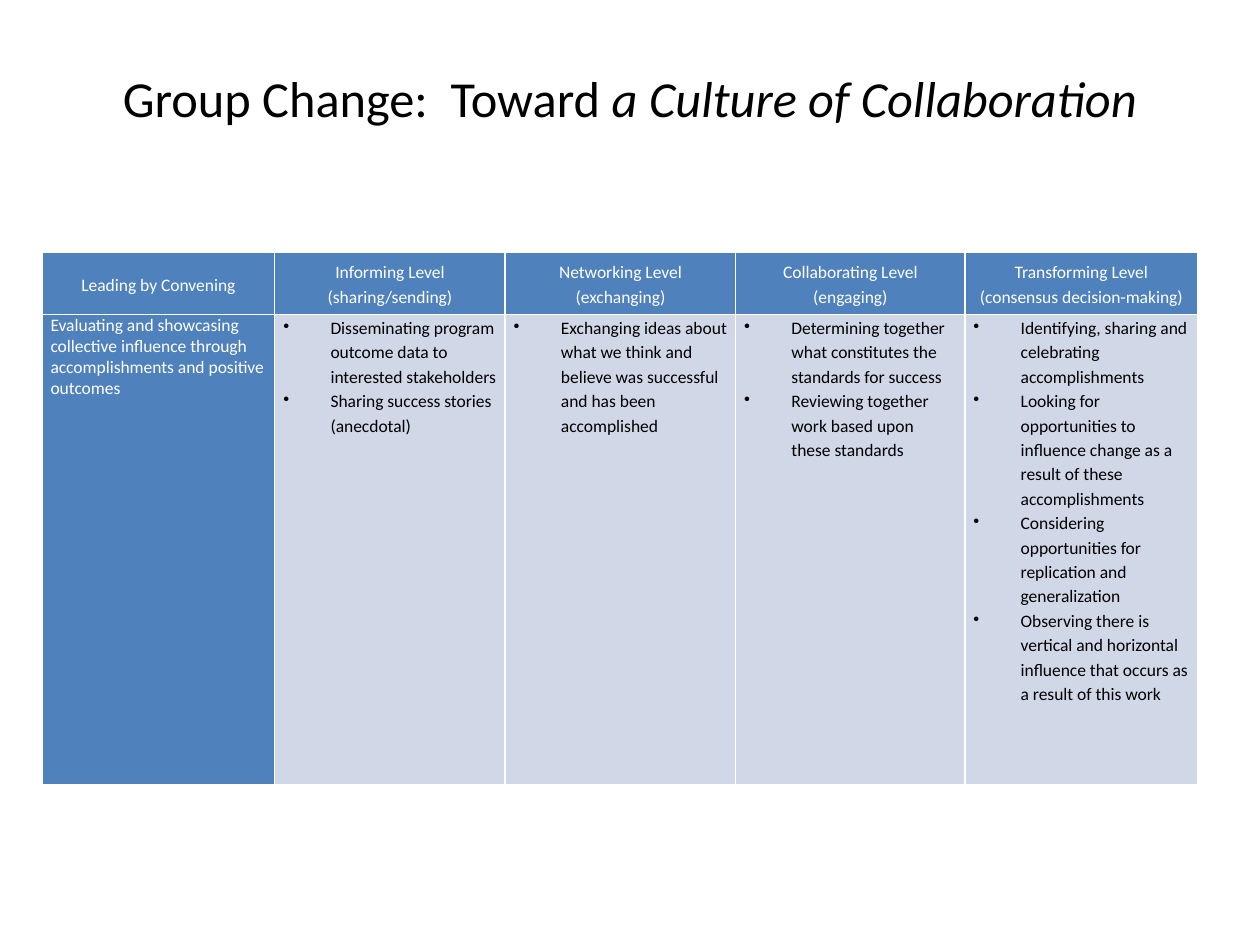
import pptx
import pptx.util
import pptx.dml.color
import pptx.enum.text
import pptx.oxml
import pptx.oxml.ns

Pt = pptx.util.Pt
ALIGN = pptx.enum.text.PP_ALIGN
ANCHOR = pptx.enum.text.MSO_ANCHOR

COLORS = {"heading": "4F81BD", "body": "D0D8E8", "light": "FFFFFF", "dark": "000000"}
FONT = "Calibri"
TITLE = [("Group Change:  Toward ", False), ("a Culture of Collaboration", True)]
LEVELS = [
    ["Leading by Convening"],
    ["Informing Level", "(sharing/sending)"],
    ["Networking Level", "(exchanging)"],
    ["Collaborating Level", "(engaging)"],
    ["Transforming Level", "(consensus decision-making)"],
]
PRACTICES = [
    ["Evaluating and showcasing collective influence through accomplishments and positive outcomes"],
    ["Disseminating program outcome data to interested stakeholders",
     "Sharing success stories (anecdotal)"],
    ["Exchanging ideas about what we think and believe was successful and has been accomplished"],
    ["Determining together what constitutes the standards for success",
     "Reviewing together work based upon these standards"],
    ["Identifying, sharing and celebrating accomplishments",
     "Looking for opportunities to influence change as a result of these accomplishments",
     "Considering opportunities for replication and generalization",
     "Observing there is vertical and horizontal influence that occurs as a result of this work"],
]
COLUMN_WIDTHS = [133, 131.7, 131.7, 131, 133]
ROW_HEIGHTS = [35.5, 268.5]
TABLE_LEFT, TABLE_TOP = 24, 144.3
BULLET_INDENT = 27
CELL_FORMAT = {"margin_left": Pt(4.9), "margin_right": Pt(4.9), "margin_top": 0, "margin_bottom": 0}
TABLE_FORMAT = {"first_row": False, "horz_banding": False}
TITLE_BOX = {"left": Pt(36), "top": Pt(21.6), "width": Pt(648), "height": Pt(68.4)}


def apply(target, formats):
    for name, value in formats.items():
        setattr(target, name, value)


def rgb(color):
    return pptx.dml.color.RGBColor.from_string(COLORS[color])


def add_run(paragraph, text, size, color, italic=False):
    run = paragraph.add_run()
    run.text = text
    apply(run.font, {"name": FONT, "size": Pt(size), "bold": False, "italic": italic})
    run.font.color.rgb = rgb(color)


def add_bullet(paragraph):
    properties = paragraph._p.get_or_add_pPr()
    properties.set("marL", str(Pt(BULLET_INDENT)))
    properties.set("indent", str(-Pt(BULLET_INDENT)))
    bullet = pptx.oxml.parse_xml(f'<a:buChar {pptx.oxml.ns.nsdecls("a")} char="•"/>')
    properties.append(bullet)


def add_borders(cell):
    properties = cell._tc.get_or_add_tcPr()
    for index, side in enumerate("LRTB"):
        border = pptx.oxml.parse_xml(
            f'<a:ln{side} {pptx.oxml.ns.nsdecls("a")} w="{Pt(1)}"><a:solidFill>'
            f'<a:srgbClr val="{COLORS["light"]}"/></a:solidFill></a:ln{side}>')
        properties.insert(index, border)


def fill_cell(cell, lines, is_level, is_label):
    heading = is_level or is_label
    apply(cell, CELL_FORMAT)
    cell.vertical_anchor = ANCHOR.MIDDLE if is_level else ANCHOR.TOP
    cell.fill.solid()
    cell.fill.fore_color.rgb = rgb("heading" if heading else "body")
    add_borders(cell)
    frame = cell.text_frame
    for index, line in enumerate(lines):
        paragraph = frame.add_paragraph() if index else frame.paragraphs[0]
        paragraph.alignment = ALIGN.CENTER if is_level else ALIGN.LEFT
        paragraph.line_spacing = 1.15 if is_level or not is_label else 1.0
        if not heading:
            add_bullet(paragraph)
        add_run(paragraph, line, 10, "light" if heading else "dark")


def main():
    deck = pptx.Presentation()
    apply(deck, {"slide_width": Pt(720), "slide_height": Pt(540)})
    slide = deck.slides.add_slide(deck.slide_layouts[5])

    title = slide.shapes.title
    apply(title, TITLE_BOX)
    apply(title.text_frame, {"vertical_anchor": ANCHOR.MIDDLE, "word_wrap": True,
                             "auto_size": pptx.enum.text.MSO_AUTO_SIZE.NONE})
    heading = title.text_frame.paragraphs[0]
    heading.alignment = ALIGN.CENTER
    for text, italic in TITLE:
        add_run(heading, text, 28.8, "dark", italic)

    rows = [LEVELS, PRACTICES]
    levels = slide.shapes.add_table(
        len(rows), len(LEVELS), Pt(TABLE_LEFT), Pt(TABLE_TOP),
        Pt(sum(COLUMN_WIDTHS)), Pt(sum(ROW_HEIGHTS))).table
    apply(levels, TABLE_FORMAT)
    for column, width in zip(levels.columns, COLUMN_WIDTHS):
        column.width = Pt(width)
    for row, height in zip(levels.rows, ROW_HEIGHTS):
        row.height = Pt(height)
    for row, contents in enumerate(rows):
        for column, lines in enumerate(contents):
            fill_cell(levels.cell(row, column), lines, row == 0, column == 0)

    deck.save("out.pptx")


if __name__ == "__main__":
    main()
